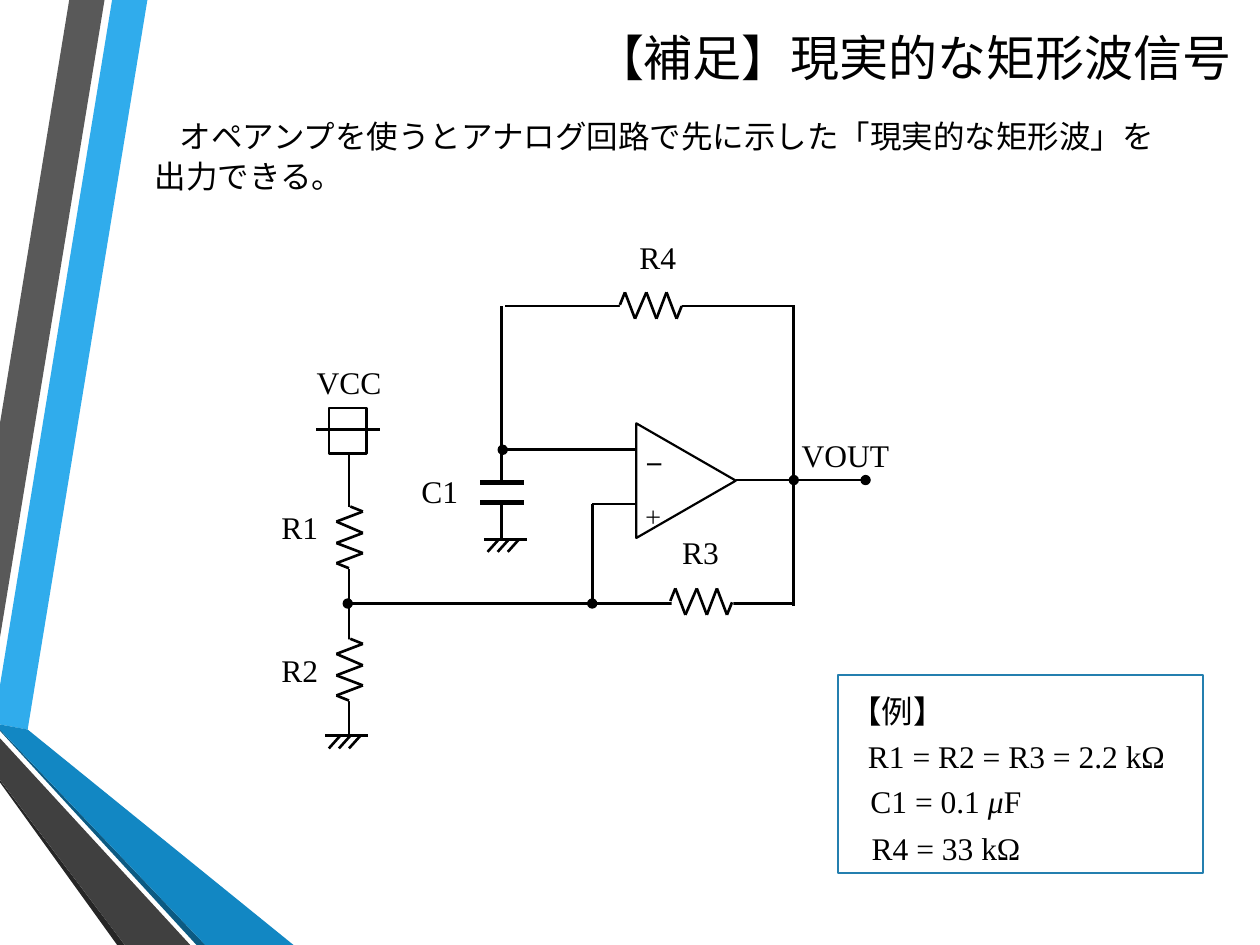
import pptx
import pptx.util
import pptx.dml.color
import pptx.enum.shapes
import pptx.enum.text
import pptx.oxml.ns
import lxml.etree

Inches = pptx.util.Inches
Pt = pptx.util.Pt
RGBColor = pptx.dml.color.RGBColor
Shape = pptx.enum.shapes.MSO_SHAPE
Align = pptx.enum.text.PP_ALIGN
Anchor = pptx.enum.text.MSO_ANCHOR
AutoSize = pptx.enum.text.MSO_AUTO_SIZE
qn = pptx.oxml.ns.qn

COLORS = {
    "black": "000000", "white": "FFFFFF", "frame": "247FAF",
    "sky": "30ACEC", "gray": "595959", "charcoal": "262626",
    "navy": "0C5A82", "blue": "1287C3", "dark": "404040",
}

presentation = pptx.Presentation()
presentation.slide_width = Inches(10)
presentation.slide_height = Inches(7.5)
slide = presentation.slides.add_slide(presentation.slide_layouts[6])


def add_text(text, box, size=18, font="Times New Roman", align=Align.CENTER,
             anchor=Anchor.TOP, bold=None, baseline=None, grow=True):
    shape = slide.shapes.add_textbox(*map(Inches, box))
    frame = shape.text_frame
    frame.word_wrap = True
    frame.auto_size = AutoSize.SHAPE_TO_FIT_TEXT if grow else AutoSize.NONE
    frame.vertical_anchor = anchor
    paragraph = frame.paragraphs[0]
    paragraph.alignment = align
    for index, part in enumerate(text.split("*")):
        run = paragraph.add_run()
        run.text = part
        run.font.size = Pt(size)
        run.font.name = font
        run.font.bold = bold
        run.font.italic = True if index % 2 else None
        run.font.color.rgb = RGBColor.from_string(COLORS["black"])
        if baseline:
            run._r.get_or_add_rPr().set("baseline", str(baseline))
    return paragraph


def add_line(x1, y1, x2, y2, width=1.5, dot=None):
    connector = slide.shapes.add_connector(
        pptx.enum.shapes.MSO_CONNECTOR.STRAIGHT, *map(Inches, (x1, y1, x2, y2)))
    connector.line.color.rgb = RGBColor.from_string(COLORS["black"])
    connector.line.width = Pt(width)
    if dot:
        line = connector.line._get_or_add_ln()
        lxml.etree.SubElement(line, qn("a:" + dot), type="oval")
    lxml.etree.SubElement(connector._element.spPr, qn("a:effectLst"))


ribbons = [
    ("sky", [(0, 5.44), (0, 5.75), (0.22, 5.79), (1.17, 0), (0.89, 0)]),
    ("gray", [(0.83, 0), (0.55, 0), (0, 3.36), (0, 5.06)]),
    ("charcoal", [(0, 6.19), (0, 6.21), (0.93, 7.5), (0.99, 7.5)]),
    ("navy", [(0, 5.79), (0, 5.8), (1.56, 7.5), (1.63, 7.5)]),
    ("blue", [(0, 5.79), (1.63, 7.5), (2.33, 7.5), (0.22, 5.79), (0, 5.75)]),
    ("dark", [(0, 6.19), (0.99, 7.5), (1.51, 7.5), (0, 5.86)]),
]
for color, points in ribbons:
    corners = [(Inches(x), Inches(y)) for x, y in points]
    builder = slide.shapes.build_freeform(*corners[0])
    builder.add_line_segments(corners[1:], close=True)
    ribbon = builder.convert_to_shape()
    ribbon.shadow.inherit = False
    ribbon.fill.solid()
    ribbon.fill.fore_color.rgb = RGBColor.from_string(COLORS[color])
    ribbon.line.fill.background()

add_text("【補足】現実的な矩形波信号", (1.26, 0.04, 8.61, 0.82), size=28, font="Cabin",
         align=Align.RIGHT, anchor=Anchor.MIDDLE, grow=False)
body = add_text("オペアンプを使うとアナログ回路で先に示した「現実的な矩形波」を出力できる。",
                (1.13, 0.86, 8.27, 0.89), align=Align.LEFT, grow=False)
body.line_spacing = Pt(23)
body.space_after = Pt(6)
body._p.get_or_add_pPr().set("indent", str(Inches(0.2)))

wires = [
    (2.77, 5.85, 2.77, 3.37, None),
    (2.76, 4.79, 6.3, 4.79, "headEnd"),
    (3.99, 3.57, 5.06, 3.57, "headEnd"),
    (6.3, 3.81, 6.3, 2.42, "headEnd"),
    (4.01, 2.43, 6.29, 2.43, None),
    (5.84, 3.81, 6.87, 3.81, "tailEnd"),
    (3.98, 4.28, 3.98, 2.43, None),
    (4.7, 4, 5.06, 4, None),
    (4.7, 4.79, 4.7, 4, "headEnd"),
    (6.3, 4.81, 6.3, 3.78, None),
]
for *ends, dot in wires:
    add_line(*ends, dot=dot)

blocks = [
    (Shape.ISOSCELES_TRIANGLE, (4.99, 3.42, 0.91, 0.79), 90, "white", "black"),
    (Shape.RECTANGLE, (3.76, 3.83, 0.41, 0.16), 0, "white", None),
    (Shape.RECTANGLE, (4.92, 2.32, 0.49, 0.22), 0, "white", None),
    (Shape.RECTANGLE, (5.33, 4.67, 0.49, 0.22), 0, "white", None),
    (Shape.RECTANGLE, (2.52, 4.16, 0.49, 0.22), 90, "white", None),
    (Shape.RECTANGLE, (2.52, 5.21, 0.49, 0.22), 90, "white", None),
    (Shape.RECTANGLE, (2.61, 3.24, 0.3, 0.36), 0, "white", "black"),
    (Shape.RECTANGLE, (6.65, 5.36, 2.9, 1.57), 0, None, "frame"),
]
for kind, box, rotation, fill, outline in blocks:
    shape = slide.shapes.add_shape(kind, *map(Inches, box))
    shape.rotation = rotation
    shape.shadow.inherit = False
    if fill:
        shape.fill.solid()
        shape.fill.fore_color.rgb = RGBColor.from_string(COLORS[fill])
    else:
        shape.fill.background()
    if outline:
        shape.line.color.rgb = RGBColor.from_string(COLORS[outline])
        shape.line.width = Pt(1.25)
    else:
        shape.line.fill.background()

zigzag = [(0, 0.1), (0.04, 0), (0.12, 0.21), (0.21, 0),
          (0.29, 0.21), (0.37, 0), (0.45, 0.21), (0.49, 0.11)]
resistors = [(4.92, 2.32, False), (5.32, 4.67, False),
             (2.67, 4.02, True), (2.67, 5.07, True)]
for left, top, upright in resistors:
    points = [(left + 0.21 - y, top + x) if upright else (left + x, top + y)
              for x, y in zigzag]
    for start, end in zip(points, points[1:]):
        add_line(*start, *end)

for left, top in [(3.84, 4.28), (2.58, 5.84)]:
    add_line(left, top, left + 0.34, top)
    for step in range(3):
        foot = left + 0.03 + 0.08 * step
        add_line(foot, top + 0.1, foot + 0.09, top)

for plate_top in (3.83, 3.99):
    add_line(3.81, plate_top, 4.16, plate_top, width=3)
add_line(2.51, 3.41, 3.02, 3.41)

add_text("－", (5.02, 3.35, 0.29, 0.31), size=20, font="Arial", bold=True, baseline=-25000)
add_text("＋", (5.02, 3.8, 0.29, 0.29), font="Arial", baseline=-25000)

labels = [("VOUT", 6.24, 3.41), ("VCC", 2.3, 2.83), ("R1", 1.91, 3.98), ("R2", 1.91, 5.12),
          ("R3", 5.09, 4.18), ("R4", 4.75, 1.84), ("C1", 3.02, 3.7)]
for name, left, top in labels:
    add_text(name, (left, top, 0.94, 0.4))

examples = [("【例】", 6.65, 5.44), ("R1 = R2 = R3 = 2.2 kΩ", 6.79, 5.8),
            ("C1 = 0.1 *μ*F", 6.81, 6.16), ("R4 = 33 kΩ", 6.82, 6.53)]
for value, left, top in examples:
    add_text(value, (left, top, 2.72, 0.4), align=Align.LEFT)

presentation.save("out.pptx")
